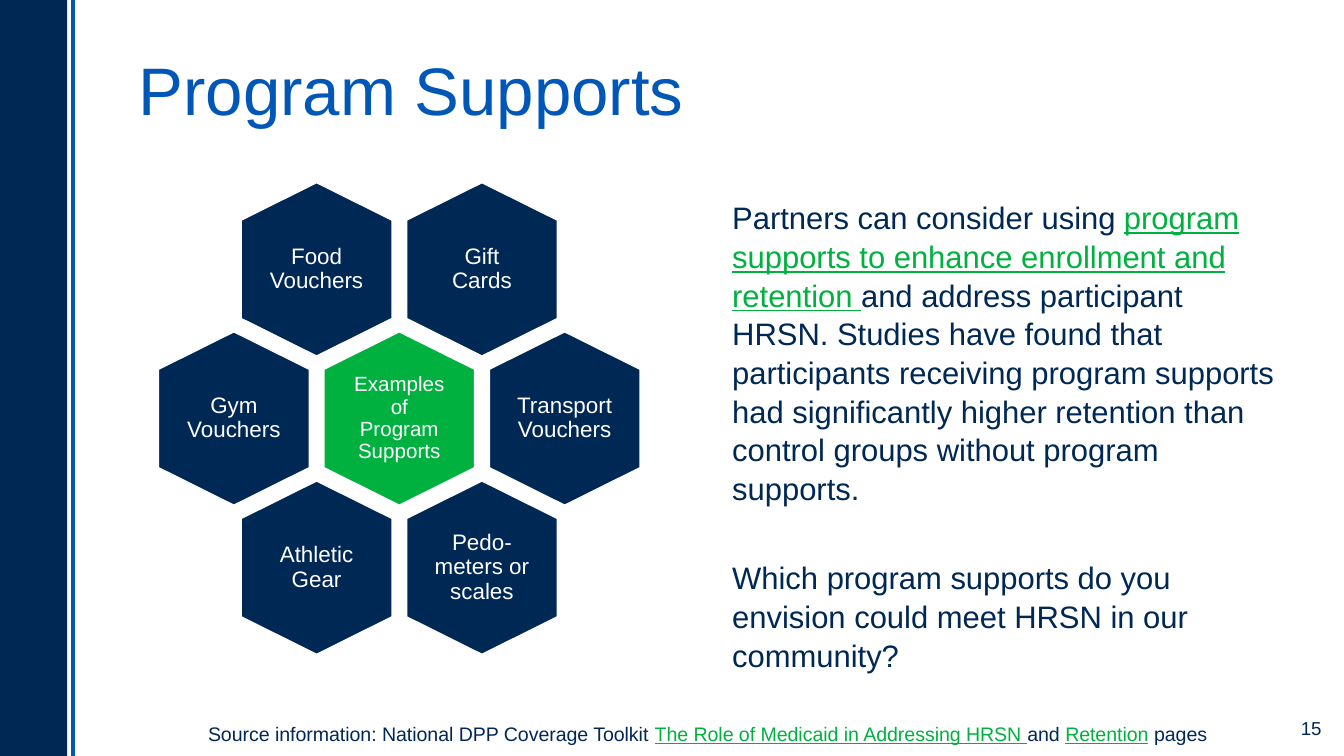
"""Build the Program Supports slide with its honeycomb of examples."""
import dataclasses
import typing

import lxml.etree
import pptx
import pptx.dml.color
import pptx.enum.shapes
import pptx.enum.text
import pptx.oxml.ns
import pptx.util

Pt = pptx.util.Pt
Align = pptx.enum.text.PP_ALIGN
Anchor = pptx.enum.text.MSO_ANCHOR
Color = pptx.dml.color.RGBColor


@dataclasses.dataclass(frozen=True)
class Theme:
    """Colours and type sizes of the slide."""
    font: str = "Arial"
    navy: Color = Color(0x00, 0x28, 0x55)
    blue: Color = Color(0x00, 0x57, 0xB8)
    green: Color = Color(0x00, 0xB1, 0x40)
    white: Color = Color(0xFF, 0xFF, 0xFF)
    title: float = 36
    body: float = 16.6
    cell: float = 12
    center: float = 11
    source: float = 10.5
    number: float = 10


class Box(typing.NamedTuple):
    """Left, top, width and height in points."""
    left: float
    top: float
    width: float
    height: float


class Span(typing.NamedTuple):
    """A run of text, plain or styled as a link."""
    text: str
    linked: bool = False


class Cell(typing.NamedTuple):
    """A hexagon placed by half-column and row steps from the centre."""
    label: str
    half_columns: int
    row: int


THEME = Theme()
SLIDE_WIDTH, SLIDE_HEIGHT = 720, 405
CENTER_X, CENTER_Y = 213.9, 224.2
HEXAGON_WIDTH, HEXAGON_HEIGHT, SHOULDER = 82, 94.3, 20.4
HALF_COLUMN, ROW_STEP = 44.3, 79.9

CELLS = [
    Cell("Gift Cards", 1, -1),
    Cell("Food Vouchers", -1, -1),
    Cell("Examples of Program Supports", 0, 0),
    Cell("Transport Vouchers", 2, 0),
    Cell("Pedo-meters or scales", 1, 1),
    Cell("Athletic Gear", -1, 1),
    Cell("Gym Vouchers", -2, 0),
]
BODY = [
    [
        Span("Partners can consider using "),
        Span("program supports to enhance enrollment and retention ", True),
        Span("and address participant HRSN. Studies have found that participants "
             "receiving program supports had significantly higher retention than "
             "control groups without program supports."),
    ],
    [Span("Which program supports do you envision could meet HRSN in our community?")],
]
SOURCE = [
    Span("Source information: National DPP Coverage Toolkit "),
    Span("The Role of Medicaid in Addressing HRSN ", True),
    Span("and "),
    Span("Retention", True),
    Span(" pages"),
]


def add_run(paragraph, text: str, size: float, color: Color, underline: bool = False) -> None:
    """Append one formatted run."""
    run = paragraph.add_run()
    run.text = text
    run.font.name = THEME.font
    run.font.size = Pt(size)
    run.font.color.rgb = color
    if underline:
        run.font.underline = True


def add_spans(paragraph, spans: list[Span], size: float) -> None:
    """Append plain and link-styled runs."""
    for span in spans:
        color = THEME.green if span.linked else THEME.navy
        add_run(paragraph, span.text, size, color, span.linked)


def add_text_frame(slide, box: Box, wrap: bool = True):
    """Add a text box and return its frame."""
    frame = slide.shapes.add_textbox(*map(Pt, box)).text_frame
    frame.word_wrap = wrap
    return frame


def add_sidebar(slide) -> None:
    """Draw the side band and the rule beside it."""
    line = slide.shapes.add_connector(
        pptx.enum.shapes.MSO_CONNECTOR.STRAIGHT, Pt(39), Pt(SLIDE_HEIGHT), Pt(39), Pt(0))
    line.line.color.rgb = THEME.blue
    line.line.width = Pt(2.25)
    properties = line.element.find(pptx.oxml.ns.qn("p:spPr"))
    lxml.etree.SubElement(properties, pptx.oxml.ns.qn("a:effectLst"))
    band = slide.shapes.add_shape(
        pptx.enum.shapes.MSO_SHAPE.RECTANGLE, Pt(0), Pt(0), Pt(36), Pt(SLIDE_HEIGHT))
    band.shadow.inherit = False
    band.fill.solid()
    band.fill.fore_color.rgb = THEME.navy
    band.line.fill.background()


def add_title(slide) -> None:
    """Place and format the title placeholder."""
    title = slide.shapes.title
    title.left, title.top, title.width, title.height = map(Pt, Box(67, 15, 617, 57.6))
    frame = title.text_frame
    frame.auto_size = pptx.enum.text.MSO_AUTO_SIZE.NONE
    frame.vertical_anchor = Anchor.BOTTOM
    paragraph = frame.paragraphs[0]
    paragraph.alignment = Align.LEFT
    add_run(paragraph, "Program Supports", THEME.title, THEME.blue)


def add_hexagon(slide, cell: Cell) -> None:
    """Draw one labelled cell of the honeycomb."""
    x = CENTER_X + cell.half_columns * HALF_COLUMN
    top = CENTER_Y + cell.row * ROW_STEP - HEXAGON_HEIGHT / 2
    left, right = x - HEXAGON_WIDTH / 2, x + HEXAGON_WIDTH / 2
    bottom = top + HEXAGON_HEIGHT
    points = [(right, top + SHOULDER), (right, bottom - SHOULDER), (x, bottom),
              (left, bottom - SHOULDER), (left, top + SHOULDER)]
    builder = slide.shapes.build_freeform(Pt(x), Pt(top))
    builder.add_line_segments([(Pt(across), Pt(down)) for across, down in points])
    shape = builder.convert_to_shape()
    is_center = cell.half_columns == 0
    shape.shadow.inherit = False
    shape.fill.solid()
    shape.fill.fore_color.rgb = THEME.green if is_center else THEME.navy
    shape.line.color.rgb = THEME.white
    shape.line.width = Pt(2)
    frame = shape.text_frame
    frame.word_wrap = True
    frame.vertical_anchor = Anchor.MIDDLE
    frame.margin_left = frame.margin_right = Pt(15)
    frame.margin_top = frame.margin_bottom = Pt(17)
    paragraph = frame.paragraphs[0]
    paragraph.alignment = Align.CENTER
    paragraph.line_spacing = 0.9
    add_run(paragraph, cell.label, THEME.center if is_center else THEME.cell, THEME.white)


def add_body(slide) -> None:
    """Write the paragraphs beside the honeycomb."""
    frame = add_text_frame(slide, Box(385.2, 102.2, 305.3, 262.8))
    for index, spans in enumerate(BODY):
        paragraph = frame.add_paragraph() if index else frame.paragraphs[0]
        paragraph.line_spacing = 1.04
        if index:
            paragraph.space_before = Pt(27)
        add_spans(paragraph, spans, THEME.body)


def add_footer(slide) -> None:
    """Write the source line and the page number."""
    source = add_text_frame(slide, Box(104.4, 383, 561.6, 20.2), wrap=False)
    add_spans(source.paragraphs[0], SOURCE, THEME.source)
    number = add_text_frame(slide, Box(648, 379.4, 67, 21.6))
    number.vertical_anchor = Anchor.MIDDLE
    number.paragraphs[0].alignment = Align.RIGHT
    add_run(number.paragraphs[0], "15", THEME.number, THEME.navy)


def main() -> None:
    """Build and save the presentation."""
    presentation = pptx.Presentation()
    presentation.slide_width = Pt(SLIDE_WIDTH)
    presentation.slide_height = Pt(SLIDE_HEIGHT)
    slide = presentation.slides.add_slide(presentation.slide_layouts[5])
    add_sidebar(slide)
    add_title(slide)
    add_body(slide)
    for cell in CELLS:
        add_hexagon(slide, cell)
    add_footer(slide)
    presentation.save("out.pptx")


if __name__ == "__main__":
    main()
